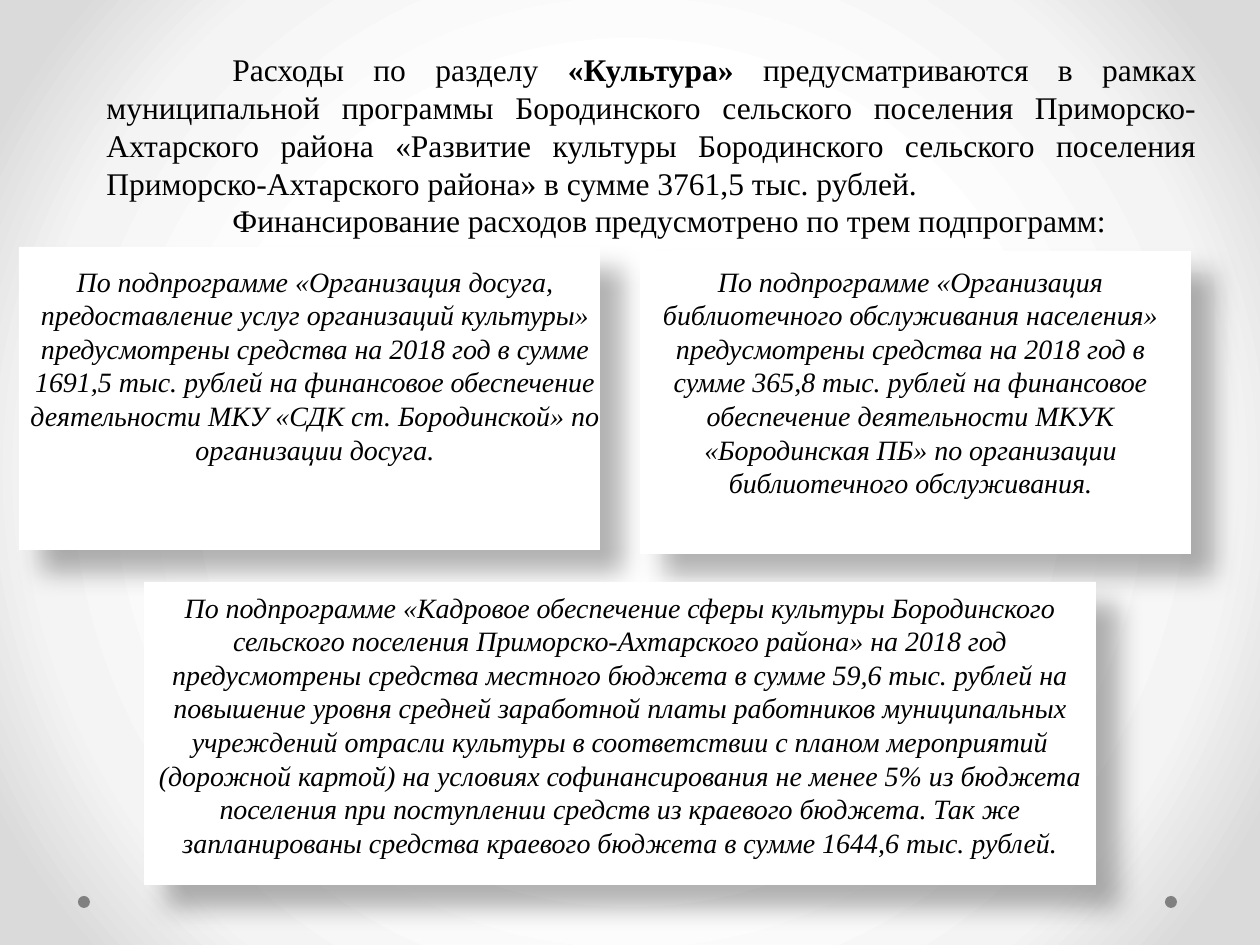
import pptx
import pptx.dml.color
import pptx.enum.shapes
import pptx.enum.text
import pptx.oxml
import pptx.oxml.ns
import pptx.util

PX = 914400 / 126
FONT = "Times New Roman"
COLORS = {"text": "000000", "card": "FFFFFF", "dot": "808080", "shade": "000000"}
STOPS = [(50, "FFFFFF"), (76, "F4F4F4"), (92, "DADADA")]

# Each paragraph is a list of (text, bold) runs.
INTRO = [
    [("Расходы по разделу ", False), ("«Культура» ", True),
     ("предусматриваются в рамках муниципальной программы Бородинского сельского "
      "поселения Приморско-Ахтарского района «Развитие культуры Бородинского сельского "
      "поселения Приморско-Ахтарского района» в сумме 3761,5 тыс. рублей.", False)],
    [("Финансирование расходов предусмотрено по трем подпрограмм:", False)],
]
INTRO_BOX = (94, 44, 1115, 204)

# Card box, text box, paragraphs
CARDS = [
    ((19, 247, 581, 303), (0, 258, 630, 217), [
        "По подпрограмме «Организация досуга, предоставление услуг организаций культуры» "
        "предусмотрены средства на 2018 год в сумме 1691,5 тыс. рублей на финансовое "
        "обеспечение деятельности МКУ «СДК ст. Бородинской» по организации досуга."]),
    ((640, 251, 551, 303), (630, 258, 561, 251), [
        "По подпрограмме «Организация библиотечного обслуживания населения»",
        "предусмотрены средства на 2018 год в сумме 365,8 тыс. рублей на финансовое "
        "обеспечение деятельности МКУК «Бородинская ПБ» по организации библиотечного "
        "обслуживания."]),
    ((144, 582, 952, 303), (144, 584, 952, 289), [
        "По подпрограмме «Кадровое обеспечение сферы культуры Бородинского сельского "
        "поселения Приморско-Ахтарского района» на 2018 год предусмотрены средства местного "
        "бюджета в сумме 59,6 тыс. рублей на повышение уровня средней заработной платы "
        "работников муниципальных учреждений отрасли культуры в соответствии с планом "
        "мероприятий (дорожной картой) на условиях софинансирования не менее 5% из бюджета "
        "поселения при поступлении средств из краевого бюджета. Так же запланированы "
        "средства краевого бюджета в сумме 1644,6 тыс. рублей."]),
]
DOTS = [(78, 896, 12, 12), (1165, 896, 12, 12)]

SHAPE = pptx.enum.shapes.MSO_SHAPE
ALIGN = pptx.enum.text.PP_ALIGN
NS = pptx.oxml.ns.nsdecls("a")


def emu(box):
    return [round(n * PX) for n in box]


def rgb(name):
    return pptx.dml.color.RGBColor.from_string(COLORS[name])


def paint(slide):
    """Fill the background with a round gradient."""
    slide.background.fill.gradient()
    old = slide.element.find(".//" + pptx.oxml.ns.qn("a:gradFill"))
    stops = "".join(f'<a:gs pos="{pos * 1000}"><a:srgbClr val="{tone}"/></a:gs>'
                    for pos, tone in STOPS)
    new = pptx.oxml.parse_xml(
        f'<a:gradFill {NS} rotWithShape="1"><a:gsLst>{stops}</a:gsLst><a:path path="circle">'
        '<a:fillToRect l="50000" t="50000" r="50000" b="50000"/></a:path></a:gradFill>')
    old.getparent().replace(old, new)


def add_solid(slide, kind, box, color):
    shape = slide.shapes.add_shape(kind, *emu(box))
    shape.shadow.inherit = False
    shape.fill.solid()
    shape.fill.fore_color.rgb = rgb(color)
    shape.line.fill.background()
    return shape


def add_shade(shape):
    """Drop a soft shadow to the lower right."""
    effects = shape.element.spPr.find(pptx.oxml.ns.qn("a:effectLst"))
    blur, dist = pptx.util.Pt(15), pptx.util.Pt(18)
    effects.append(pptx.oxml.parse_xml(
        f'<a:outerShdw {NS} blurRad="{blur}" dist="{dist}" dir="{45 * 60000}" algn="tl" '
        f'rotWithShape="0"><a:srgbClr val="{COLORS["shade"]}"><a:alpha val="30000"/>'
        '</a:srgbClr></a:outerShdw>'))


def add_text(slide, box, paras, size, align, italic=False, indent=0):
    frame = slide.shapes.add_textbox(*emu(box)).text_frame
    frame.word_wrap = True
    for i, runs in enumerate(paras):
        para = frame.add_paragraph() if i else frame.paragraphs[0]
        para.alignment = align
        if indent:
            props = para._p.get_or_add_pPr()
            props.set("marL", "0")
            props.set("indent", str(round(indent * PX)))
        for text, bold in runs:
            run = para.add_run()
            run.text = text
            font = run.font
            font.name, font.size = FONT, pptx.util.Pt(size)
            font.bold, font.italic = bold, italic
            font.color.rgb = rgb("text")


def main():
    deck = pptx.Presentation()
    deck.slide_width, deck.slide_height = emu((1260, 945))
    slide = deck.slides.add_slide(deck.slide_layouts[6])
    paint(slide)
    for box in DOTS:
        add_solid(slide, SHAPE.OVAL, box, "dot")
    for card, _, _ in CARDS:
        add_shade(add_solid(slide, SHAPE.RECTANGLE, card, "card"))
    add_text(slide, INTRO_BOX, INTRO, 18, ALIGN.JUSTIFY, indent=126)
    for _, box, texts in CARDS:
        paras = [[(text, False)] for text in texts]
        add_text(slide, box, paras, 16, ALIGN.CENTER, italic=True)
    deck.save("out.pptx")


if __name__ == "__main__":
    main()
